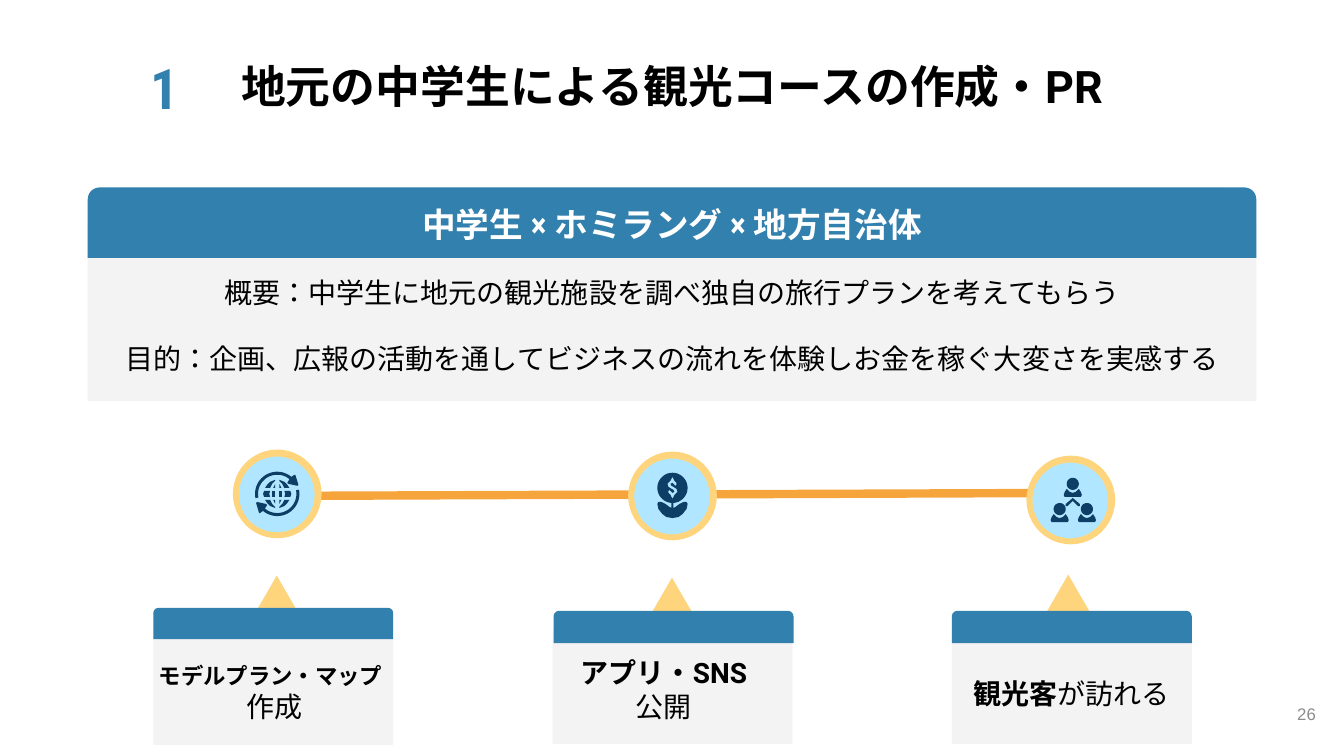
from dataclasses import dataclass
from math import cos, radians, sin
from typing import NamedTuple

from lxml.etree import SubElement
from pptx import Presentation
from pptx.dml.color import RGBColor
from pptx.enum.lang import MSO_LANGUAGE_ID as Language
from pptx.enum.shapes import MSO_CONNECTOR as Connector, MSO_SHAPE as Preset
from pptx.enum.text import MSO_ANCHOR as Anchor, MSO_AUTO_SIZE as AutoSize, PP_ALIGN as Align
from pptx.oxml.ns import qn
from pptx.shapes.autoshape import Shape
from pptx.slide import Slide
from pptx.text.text import TextFrame
from pptx.util import Inches, Pt

COLORS = {
    "blue": "3280AD", "panel": "F3F3F3", "orange": "F6A53C", "yellow": "FED57D",
    "sky": "B0E6FF", "navy": "0D3E65", "black": "000000", "white": "FFFFFF", "gray": "8C8C8C",
}
Point = tuple[float, float]
Outline = list[Point]
Box = tuple[float, float, float, float]


class Run(NamedTuple):
    text: str
    size: float = 20
    bold: bool = False


@dataclass
class Step:
    disc: Point
    icon_center: Point
    icon: list[list[Outline]]
    pointer: Point
    panel: Point
    band: Box
    label_box: Box
    label: list[list[Run]]


def rgb(color: str) -> RGBColor:
    return RGBColor.from_string(COLORS[color])


def write_text(frame: TextFrame, paragraphs: list[list[Run]], *, font: str = "Roboto",
               color: str = "black", align: Align = Align.CENTER, anchor: Anchor = Anchor.MIDDLE,
               inset: Point = (0.1, 0.1), wrap: bool = True, gap: float = 0,
               fit: AutoSize = AutoSize.NONE) -> None:
    frame.word_wrap, frame.auto_size, frame.vertical_anchor = wrap, fit, anchor
    frame.margin_left = frame.margin_right = Inches(inset[0])
    frame.margin_top = frame.margin_bottom = Inches(inset[1])
    for index, runs in enumerate(paragraphs):
        paragraph = frame.paragraphs[0] if index == 0 else frame.add_paragraph()
        paragraph.alignment = align
        paragraph.space_before = Pt(gap if index else 0)
        for text, size, bold in runs:
            run = paragraph.add_run()
            run.text = text
            run.font.name, run.font.size, run.font.bold = font, Pt(size), bold
            run.font.color.rgb = rgb(color)
            run.font.language_id = Language.JAPANESE
            SubElement(run.font._element, qn("a:ea")).set("typeface", font)


def add_text(slide: Slide, box: Box, paragraphs: list[list[Run]], **style) -> None:
    write_text(slide.shapes.add_textbox(*map(Inches, box)).text_frame, paragraphs, **style)


def place(shape: Shape, box: Box) -> None:
    shape.left, shape.top, shape.width, shape.height = map(Inches, box)


def paint(shape: Shape, color: str) -> None:
    shape.shadow.inherit = False
    shape.fill.solid()
    shape.fill.fore_color.rgb = rgb(color)
    shape.line.fill.background()


def add_preset(slide: Slide, preset: Preset, box: Box, color: str) -> None:
    paint(slide.shapes.add_shape(preset, *map(Inches, box)), color)


def add_outlines(slide: Slide, center: Point, outlines: list[Outline]) -> None:
    moved = [[(Inches(center[0] + x), Inches(center[1] + y)) for x, y in outline]
             for outline in outlines]
    builder = slide.shapes.build_freeform(*moved[0][0], scale=1.0)
    for index, outline in enumerate(moved):
        if index:
            builder.move_to(*outline[0])
        builder.add_line_segments(outline[1:], close=True)
    paint(builder.convert_to_shape(), "navy")


def arc(radius: float, start: float, end: float, center: Point = (0, 0), steps: int = 36) -> Outline:
    angles = [radians(start + (end - start) * i / steps) for i in range(steps + 1)]
    return [(center[0] + radius * cos(a), center[1] + radius * sin(a)) for a in angles]


def scaled(outline: Outline, sx: float, sy: float) -> Outline:
    return [(x * sx, y * sy) for x, y in outline]


def mirrored(half: Outline) -> Outline:
    return half + scaled(half[::-1], -1, 1)


def shifted(outline: Outline, dx: float, dy: float) -> Outline:
    return [(x + dx, y + dy) for x, y in outline]


def globe_icon() -> list[list[Outline]]:
    arrow_head = [(0.17, -0.19), (0.18, -0.19), (0.21, -0.09), (0.2, -0.08), (0.11, -0.1), (0.1, -0.11)]
    arrow = arc(0.22, 169, 310) + arrow_head + arc(0.19, 310, 169)
    inner_cap = [(0.02, -0.1), (0.03, -0.08), (0.04, -0.06), (0.02, -0.06)]
    outer_cap = [(0.02, -0.14), (0.07, -0.12), (0.1, -0.09), (0.12, -0.06),
                 (0.07, -0.06), (0.05, -0.1), (0.02, -0.13)]
    inner_band = [(0.02, -0.03), (0.05, -0.03), (0.05, 0.03), (0.02, 0.03)]
    outer_band = [(0.07, -0.03), (0.13, -0.03), (0.14, 0), (0.13, 0.03), (0.07, 0.03), (0.08, 0)]
    caps = [scaled(cap, sx, sy) for cap in (inner_cap, outer_cap) for sx in (1, -1) for sy in (1, -1)]
    bands = [scaled(band, sx, 1) for band in (inner_band, outer_band) for sx in (1, -1)]
    return [[outline] for outline in [arrow, scaled(arrow, -1, -1), *caps, *bands]]


def money_plant_icon() -> list[list[Outline]]:
    dollar_half = [(0, -0.11), (0.01, -0.09), (0.02, -0.07), (0.04, -0.05), (0.04, -0.03), (0.03, -0.02),
                   (0.02, -0.03), (0, -0.05), (-0.02, -0.04), (-0.01, -0.02), (0.01, -0.01),
                   (0.04, 0.01), (0.05, 0.04), (0.03, 0.06), (0.02, 0.07), (0.01, 0.09)]
    dollar = shifted(dollar_half + scaled(dollar_half, -1, -1), 0, -0.08)
    leaves = mirrored([(0.01, 0.06), (0.01, 0.12), (0.03, 0.11), (0.07, 0.08), (0.11, 0.06), (0.14, 0.06),
                       (0.15, 0.08), (0.14, 0.13), (0.1, 0.18), (0.06, 0.21), (0, 0.22)])
    return [[arc(0.15, 0, 360, (0, -0.08)), dollar], [leaves]]


def team_icon() -> list[list[Outline]]:
    head = arc(0.06, 0, 360)
    shoulders = mirrored([(0, 0.09), (0.03, 0.08), (0.06, 0.05), (0.08, 0.08), (0.09, 0.11), (0.08, 0.13)])
    chevron = mirrored([(0, -0.02), (0.07, 0.04), (0.07, 0.06), (0.05, 0.06), (0, 0.01)])
    members = [(0, -0.16), (-0.13, 0.09), (0.14, 0.09)]
    return [[shifted(part, *spot)] for spot in members for part in (head, shoulders)] + [[chevron]]


STEPS = [
    Step((2.31, 4.46), (2.75, 4.9), globe_icon(), (2.52, 5.71), (1.52, 6.11),
         (1.52, 6.03, 2.38, 0.31), (0.96, 6.35, 3.45, 1.04),
         [[Run("モデルプラン・マップ", 16, True)], [Run(" 作成")]]),
    Step((6.23, 4.48), (6.67, 4.92), money_plant_icon(), (6.44, 5.73), (5.48, 6.1),
         (5.49, 6.06, 2.38, 0.32), (5.46, 6.32, 2.25, 1.04),
         [[Run("アプリ・SNS", bold=True)], [Run("公開")]]),
    Step((10.18, 4.52), (10.64, 4.96), team_icon(), (10.37, 5.7), (9.44, 6.1),
         (9.44, 6.06, 2.38, 0.32), (9.09, 6.34, 3.08, 1.07),
         [[Run("観光客", bold=True), Run("が訪れる")]]),
]


def add_timeline(slide: Slide) -> None:
    timeline = slide.shapes.add_connector(Connector.STRAIGHT, *map(Inches, (2.75, 4.92, 10.73, 4.89)))
    timeline.line.color.rgb = rgb("orange")
    timeline.line.width = Pt(6)
    SubElement(timeline.element.spPr, qn("a:effectLst"))


def add_step(slide: Slide, step: Step) -> None:
    x, y = step.disc
    add_preset(slide, Preset.OVAL, (x, y, 0.88, 0.88), "yellow")
    add_preset(slide, Preset.OVAL, (x + 0.06, y + 0.07, 0.75, 0.75), "sky")
    for outlines in step.icon:
        add_outlines(slide, step.icon_center, outlines)
    add_preset(slide, Preset.ISOSCELES_TRIANGLE, (*step.pointer, 0.45, 0.39), "yellow")
    add_preset(slide, Preset.ROUND_2_SAME_RECTANGLE, (*step.panel, 2.38, 1.28), "panel")
    add_preset(slide, Preset.ROUND_2_SAME_RECTANGLE, step.band, "blue")
    add_text(slide, step.label_box, step.label)


def add_overview(slide: Slide, overview: Shape) -> None:
    add_preset(slide, Preset.ROUND_2_SAME_RECTANGLE, (0.87, 1.86, 11.59, 2.12), "panel")
    add_preset(slide, Preset.ROUND_2_SAME_RECTANGLE, (0.87, 1.86, 11.59, 0.7), "blue")
    add_text(slide, (0.87, 1.86, 11.59, 0.72), [[Run("中学生 × ホミラング × 地方自治体", 24, True)]],
             font="Roboto Condensed", color="white")
    place(overview, (0.87, 2.78, 11.59, 0.89))
    write_text(overview.text_frame, [
        [Run("概要：中学生に地元の観光施設を調べ独自の旅行プランを考えてもらう")],
        [Run("目的：企画、広報の活動を通してビジネスの流れを体験しお金を稼ぐ大変さを実感する")],
    ], gap=23)
    for paragraph in overview.text_frame.paragraphs:
        properties = paragraph._p.get_or_add_pPr()
        properties.set("marL", "0")
        properties.set("indent", "0")
        SubElement(properties, qn("a:buNone"))
    overview.element.getparent().append(overview.element)


def main() -> None:
    deck = Presentation()
    deck.slide_width, deck.slide_height = Inches(13.33), Inches(7.5)
    slide = deck.slides.add_slide(deck.slide_layouts[1])
    heading, overview = slide.shapes.title, slide.placeholders[1]
    place(heading, (0.26, 0.45, 12.81, 0.84))
    write_text(heading.text_frame, [[Run("地元の中学生による観光コースの作成・PR", 32, True)]],
               anchor=Anchor.TOP, inset=(0.13, 0.13))
    add_overview(slide, overview)
    add_timeline(slide)
    for step in STEPS:
        add_step(slide, step)
    add_text(slide, (1.39, 0.48, 0.51, 0.77), [[Run("1", 40, True)]], font="Roboto Condensed", color="blue",
             align=Align.LEFT, anchor=Anchor.TOP, inset=(0.1, 0.05), wrap=False, fit=AutoSize.SHAPE_TO_FIT_TEXT)
    add_text(slide, (12.35, 6.8, 0.8, 0.57), [[Run("26", 12)]], font="Arial", color="gray", align=Align.RIGHT)
    deck.save("out.pptx")


if __name__ == "__main__":
    main()
